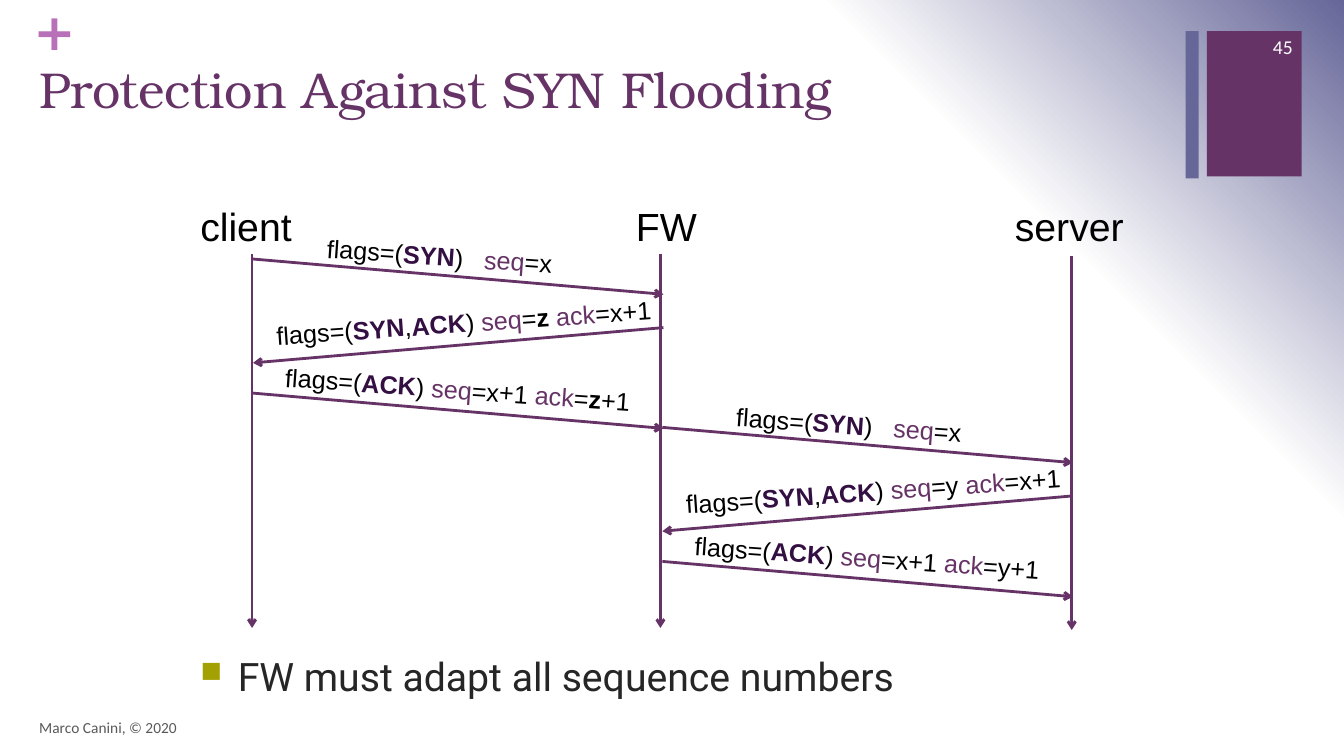
from dataclasses import dataclass
from typing import Any

from lxml.etree import SubElement
from pptx import Presentation
from pptx.dml.color import RGBColor
from pptx.enum.shapes import MSO_CONNECTOR, MSO_SHAPE
from pptx.enum.text import MSO_ANCHOR, PP_ALIGN
from pptx.oxml import parse_xml
from pptx.oxml.ns import nsdecls, qn
from pptx.slide import Slide
from pptx.text.text import Font
from pptx.util import Inches, Pt


@dataclass(frozen=True)
class Theme:
    plum: str = "663366"
    slate: str = "666699"
    orchid: str = "B870B8"
    flag: str = "330F42"
    olive: str = "A3A101"
    body: str = "262626"
    footer: str = "595959"
    black: str = "000000"
    white: str = "FFFFFF"
    title_size: int = 36
    heading_size: int = 28
    label_size: int = 18
    number_size: int = 14
    footer_size: int = 11
    line_width: float = 2


THEME = Theme()


@dataclass(frozen=True)
class Run:
    text: str
    color: str = THEME.black
    bold: bool = False
    spacing: int = 0  # extra points after each character


@dataclass(frozen=True)
class TextItem:
    runs: list[Run]
    box: tuple[float, float, float, float]
    size: int
    font: str = "Arial"
    alignment: PP_ALIGN = PP_ALIGN.LEFT
    anchor: MSO_ANCHOR = MSO_ANCHOR.TOP
    margin: float | None = None
    rotation: float = 0
    bullet: bool = False


@dataclass(frozen=True)
class Message:
    """One arrow and its label, placed relative to the handshake's start."""
    runs: list[Run]
    start: float
    label_left: float
    label_top: float
    label_width: float
    reply: bool = False


def apply_format(target: Any, values: dict[str, Any]) -> None:
    for name, value in values.items():
        setattr(target, name, value)


def style_font(font: Font, item: TextItem, run: Run) -> None:
    apply_format(font, {"name": item.font, "size": Pt(item.size), "bold": run.bold})
    font.color.rgb = RGBColor.from_string(run.color)


def add_text(slide: Slide, item: TextItem) -> None:
    shape = slide.shapes.add_textbox(*map(Inches, item.box))
    shape.rotation = item.rotation
    frame = shape.text_frame
    apply_format(frame, {"word_wrap": True, "vertical_anchor": item.anchor})
    if item.margin is not None:
        sides = ("left", "top", "right", "bottom")
        apply_format(frame, {f"margin_{side}": Inches(item.margin) for side in sides})
    paragraph = frame.paragraphs[0]
    paragraph.alignment = item.alignment
    for run in item.runs:
        text_run = paragraph.add_run()
        text_run.text = run.text
        style_font(text_run.font, item, run)
        if run.spacing:
            text_run.font._element.set("spc", str(run.spacing * 100))
    if item.bullet:
        properties = paragraph._p.get_or_add_pPr()
        properties.set("marL", str(Inches(0.37)))
        properties.set("indent", str(Inches(-0.37)))
        color = SubElement(properties, qn("a:buClr"))
        SubElement(color, qn("a:srgbClr"), val=THEME.olive)
        SubElement(properties, qn("a:buSzPct"), val="75000")
        SubElement(properties, qn("a:buChar"), char="■")


def add_rectangle(slide: Slide, box: tuple[float, float, float, float], color: str) -> None:
    shape = slide.shapes.add_shape(MSO_SHAPE.RECTANGLE, *map(Inches, box))
    shape.shadow.inherit = False
    shape.fill.solid()
    shape.fill.fore_color.rgb = RGBColor.from_string(color)
    shape.line.fill.background()


def add_arrow(slide: Slide, start: tuple[float, float], end: tuple[float, float]) -> None:
    connector = slide.shapes.add_connector(
        MSO_CONNECTOR.STRAIGHT, *map(Inches, (*start, *end)))
    connector.line.width = Pt(THEME.line_width)
    connector.line.color.rgb = RGBColor.from_string(THEME.plum)
    properties = connector._element.spPr
    SubElement(properties.find(qn("a:ln")), qn("a:tailEnd"), type="arrow")
    SubElement(properties, qn("a:effectLst"))


def set_background(slide: Slide) -> None:
    """Fill with a circular gradient spreading from the lower left corner."""
    slide.background.fill.solid()
    properties = slide._element.find(f".//{qn('p:bgPr')}")
    stops = ((0, THEME.white), (75, THEME.white), (100, THEME.slate))
    stop_xml = "".join(
        f'<a:gs pos="{position * 1000}"><a:srgbClr val="{color}"/></a:gs>'
        for position, color in stops)
    properties.replace(properties[0], parse_xml(
        f'<a:gradFill {nsdecls("a")} rotWithShape="1"><a:gsLst>{stop_xml}</a:gsLst>'
        '<a:path path="circle"><a:fillToRect l="0" t="100000" r="100000" b="0"/>'
        '</a:path></a:gradFill>'))


def flag(name: str) -> Run:
    return Run(name, THEME.flag, True)


def handshake_messages(answer: Run) -> list[Message]:
    """Return the three messages, with answer as the replying side's number."""
    opening, closing = Run("flags=("), Run(") ")
    seq, ack = Run("seq", THEME.plum), Run("ack", THEME.plum)
    return [
        Message([opening, flag("SYN"), Run(")"), Run(" ", spacing=10), seq, Run("=x")],
                0, 0.4, -0.23, 2.9),
        Message([opening, flag("SYN"), Run(","), flag("ACK"), closing, seq, Run("="),
                 answer, Run(" "), ack, Run("=x+1")],
                0.68, -0.25, 0.43, 4.68, reply=True),
        Message([opening, flag("ACK"), closing, seq, Run("=x+1 "), ack, Run("="),
                 answer, Run("+1")],
                1.33, -0.2, 1.09, 4.46),
    ]


def add_handshake(slide: Slide, left: float, top: float, answer: Run) -> None:
    span, drop, tilt = 4.07, 0.35, 4
    for message in handshake_messages(answer):
        ends = [left, left + span]
        if message.reply:
            ends.reverse()
        start = top + message.start
        add_arrow(slide, (ends[0], start), (ends[1], start + drop))
        box = (left + message.label_left, top + message.label_top,
               message.label_width, 0.4)
        add_text(slide, TextItem(message.runs, box, THEME.label_size,
                                 alignment=PP_ALIGN.CENTER,
                                 rotation=360 - tilt if message.reply else tilt))


def main() -> None:
    presentation = Presentation()
    presentation.slide_width = Inches(13.33)
    presentation.slide_height = Inches(7.5)
    slide = presentation.slides.add_slide(presentation.slide_layouts[6])
    set_background(slide)
    add_rectangle(slide, (11.97, 0.31, 0.94, 1.44), THEME.plum)
    add_rectangle(slide, (11.76, 0.31, 0.13, 1.46), THEME.slate)

    for item in (
        TextItem([Run("+", THEME.orchid, True)], (0.33, 0, 0.38, 0.61),
                 THEME.title_size, "DejaVu Sans", margin=0),
        TextItem([Run("Protection Against SYN Flooding", THEME.plum)],
                 (0.29, 0.53, 11.45, 1.22), THEME.title_size, "TeX Gyre Bonum"),
        TextItem([Run("FW must adapt all sequence numbers", THEME.body)],
                 (1.89, 6.42, 9.54, 0.61), THEME.heading_size, "Roboto", bullet=True),
        TextItem([Run("Marco Canini, © 2020", THEME.footer)], (0.29, 7.02, 8.93, 0.4),
                 THEME.footer_size, "Calibri", anchor=MSO_ANCHOR.MIDDLE),
        TextItem([Run("45", THEME.white)], (12.11, 0.26, 0.81, 0.4), THEME.number_size,
                 "Calibri", PP_ALIGN.RIGHT, MSO_ANCHOR.MIDDLE),
    ):
        add_text(slide, item)

    for host, label_left, label_width, line_left, line_top in (
        ("client", 1.71, 1.46, 2.5, 2.52),
        ("FW", 5.88, 1.46, 6.55, 2.52),
        ("server", 9.75, 1.71, 10.63, 2.54),
    ):
        add_text(slide, TextItem([Run(host)], (label_left, 1.96, label_width, 0.57),
                                 THEME.heading_size, alignment=PP_ALIGN.CENTER))
        add_arrow(slide, (line_left, line_top), (line_left, line_top + 3.71))

    add_handshake(slide, 2.51, 2.57, Run("z", bold=True))
    add_handshake(slide, 6.57, 4.24, Run("y"))
    presentation.save("out.pptx")


if __name__ == "__main__":
    main()
